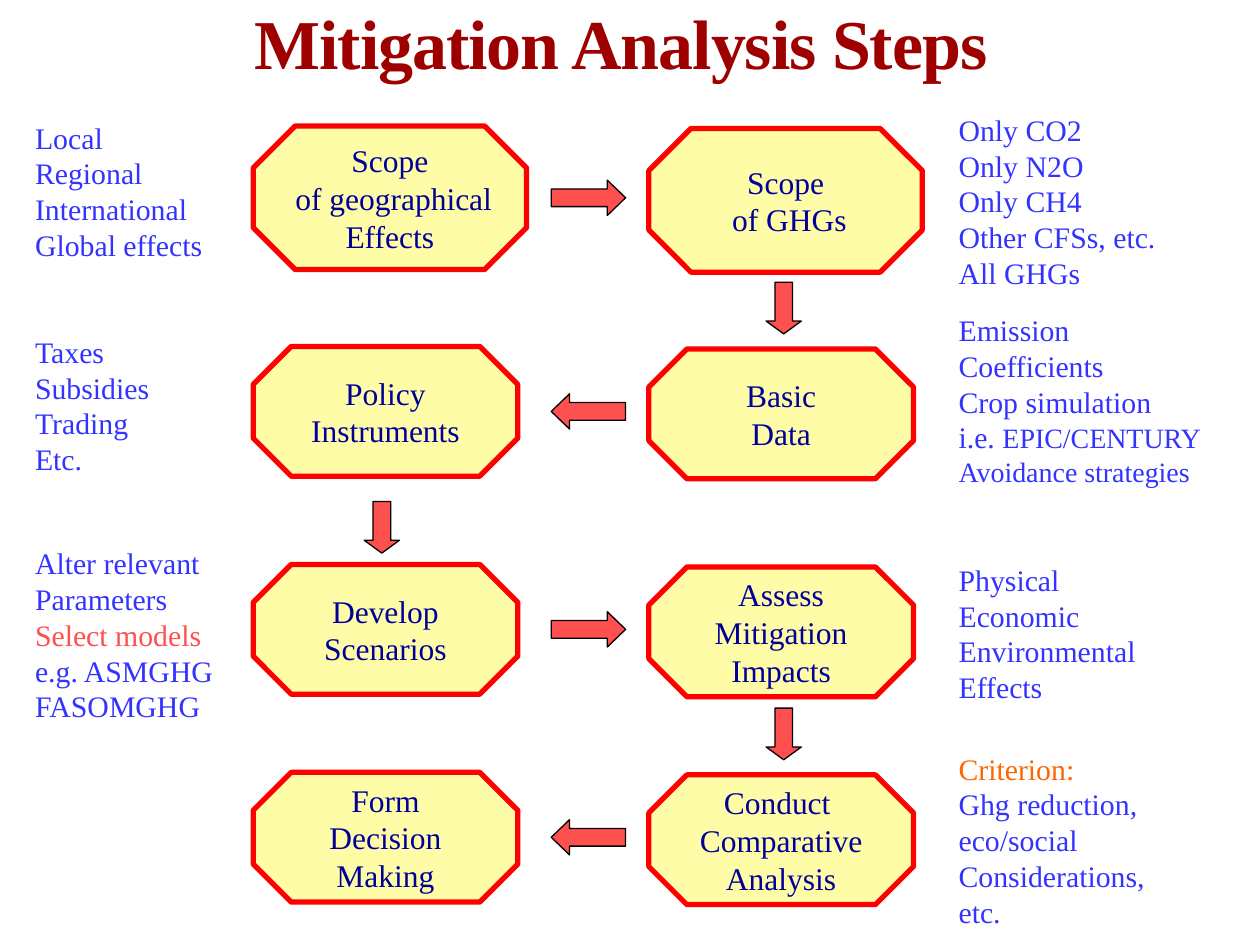
from pptx import Presentation
from pptx.dml.color import RGBColor
from pptx.enum.shapes import MSO_SHAPE
from pptx.enum.text import MSO_ANCHOR, MSO_AUTO_SIZE, PP_ALIGN
from pptx.util import Inches, Pt

FONT = "Times New Roman"
DARK_RED, NAVY, BLUE = "9E0000", "000099", "3333FF"
YELLOW, RED, CORAL, ORANGE, BLACK = "FEFCA6", "FF0000", "FF5050", "FF6600", "000000"

STEP_LEFTS = (2.01, 5.15)
STEP_DROPS = (0, 0.02)
ROW_TOPS = (1, 2.75, 4.48, 6.13)
STEP_SIZES = ((2.17, 1.14), (2.1, 1.03), (2.1, 1.03), (2.1, 1.03))
NOTE_LEFTS = (0.18, 7.51)
NOTE_WIDTHS = (1.7, 2.2)
NOTE_HEIGHT = 1.31
ARROW_THICKNESS = 0.28
DOWN_ARROW_CENTERS = (3.03, 6.22)

# One row of the flow: left step, right step, direction of the arrow between them
ROWS = (
    (("Scope", " of geographical", "Effects"), ("Scope", " of GHGs"), "right"),
    (("Policy", "Instruments"), ("Basic", "Data"), "left"),
    (("Develop", "Scenarios"), ("Assess", "Mitigation", "Impacts"), "right"),
    (("Form", "Decision", "Making"), ("Conduct ", "Comparative", "Analysis"), "left"),
)
# Row above, column, distance from that row's step
DOWN_ARROWS = ((0, 1, 0.1), (1, 0, 0.2), (2, 1, 0.11))

# Column, top, lines; text after a bar is set one size smaller
NOTES = (
    (0, 0.86, ("Local", "Regional", "International", "Global effects")),
    (0, 2.56, ("Taxes", "Subsidies", "Trading", "Etc.")),
    (0, 4.38, ("Alter relevant", "Parameters", "Select models", "e.g. ASMGHG", "FASOMGHG")),
    (1, 0.94, ("Only CO2", "Only N2O", "Only CH4", "Other CFSs, etc.", "All GHGs")),
    (1, 2.52, ("Emission", "Coefficients", "Crop simulation",
               "i.e. |EPIC/CENTURY", "|Avoidance strategies")),
    (1, 4.37, ("Physical", "Economic", "Environmental", "Effects")),
    (1, 6.01, ("Criterion:", "Ghg reduction,", "eco/social", "Considerations,", "etc.")),
)
ACCENTS = {"Select models": CORAL, "Criterion:": ORANGE}


def color(hex_value):
    return RGBColor.from_string(hex_value)


def inches(box):
    return [Inches(length) for length in box]


def format_run(run, size, hex_value, bold=False):
    run.font.name = FONT
    run.font.size = Pt(size)
    run.font.bold = bold
    run.font.color.rgb = color(hex_value)


def add_outlined_shape(slide, kind, box, fill, line, line_width):
    shape = slide.shapes.add_shape(kind, *inches(box))
    shape.shadow.inherit = False
    shape.fill.solid()
    shape.fill.fore_color.rgb = color(fill)
    shape.line.color.rgb = color(line)
    shape.line.width = Pt(line_width)
    return shape


def add_title(slide, box):
    title = slide.shapes.title
    title.left, title.top, title.width, title.height = inches(box)
    frame = title.text_frame
    frame.text = "Mitigation Analysis Steps"
    frame.word_wrap = False
    frame.auto_size = MSO_AUTO_SIZE.SHAPE_TO_FIT_TEXT
    frame.vertical_anchor = MSO_ANCHOR.TOP
    paragraph = frame.paragraphs[0]
    paragraph.alignment = PP_ALIGN.LEFT
    run = paragraph.runs[0]
    format_run(run, 40, DARK_RED, bold=True)
    run.font._element.set("spc", "-60")


def add_step(slide, box, lines):
    step = add_outlined_shape(slide, MSO_SHAPE.OCTAGON, box, YELLOW, RED, 3)
    step.adjustments[0] = 0.293
    frame = step.text_frame
    frame.text = "\n".join(lines)
    frame.word_wrap = False
    frame.vertical_anchor = MSO_ANCHOR.MIDDLE
    for paragraph in frame.paragraphs:
        paragraph.alignment = PP_ALIGN.CENTER
        format_run(paragraph.runs[0], 18, NAVY)


def add_arrow(slide, center_x, center_y, length, head, rotation):
    """Place a block arrow by its centre; rotation 0 points right."""
    box = (center_x - length / 2, center_y - ARROW_THICKNESS / 2, length, ARROW_THICKNESS)
    arrow = add_outlined_shape(slide, MSO_SHAPE.RIGHT_ARROW, box, CORAL, BLACK, 0.75)
    arrow.adjustments[0] = 0.5
    arrow.adjustments[1] = head
    arrow.rotation = rotation


def add_note(slide, box, lines):
    frame = slide.shapes.add_textbox(*inches(box)).text_frame
    frame.word_wrap = True
    frame.vertical_anchor = MSO_ANCHOR.MIDDLE
    for index, line in enumerate(lines):
        paragraph = frame.add_paragraph() if index else frame.paragraphs[0]
        for size, part in zip((17, 16), line.split("|")):
            if part:
                run = paragraph.add_run()
                run.text = part
                format_run(run, size, ACCENTS.get(line, BLUE))


def add_flow(slide):
    for row, (left_lines, right_lines, direction) in enumerate(ROWS):
        width, height = STEP_SIZES[row]
        for left, drop, lines in zip(STEP_LEFTS, STEP_DROPS, (left_lines, right_lines)):
            add_step(slide, (left, ROW_TOPS[row] + drop, width, height), lines)
        rotation = 0 if direction == "right" else 180
        add_arrow(slide, 4.67, ROW_TOPS[row] + height / 2, 0.59, 0.518, rotation)
    for row, column, gap in DOWN_ARROWS:
        length = 0.41
        center_y = ROW_TOPS[row] + STEP_SIZES[row][1] + gap + length / 2
        add_arrow(slide, DOWN_ARROW_CENTERS[column], center_y, length, 0.363, 90)


def main():
    presentation = Presentation()
    presentation.slide_width, presentation.slide_height = Inches(10), Inches(7.5)
    slide = presentation.slides.add_slide(presentation.slide_layouts[5])
    add_title(slide, (1.92, -0.05, 6.08, 0.77))
    add_flow(slide)
    for column, top, lines in NOTES:
        add_note(slide, (NOTE_LEFTS[column], top, NOTE_WIDTHS[column], NOTE_HEIGHT), lines)
    presentation.save("out.pptx")


if __name__ == "__main__":
    main()
